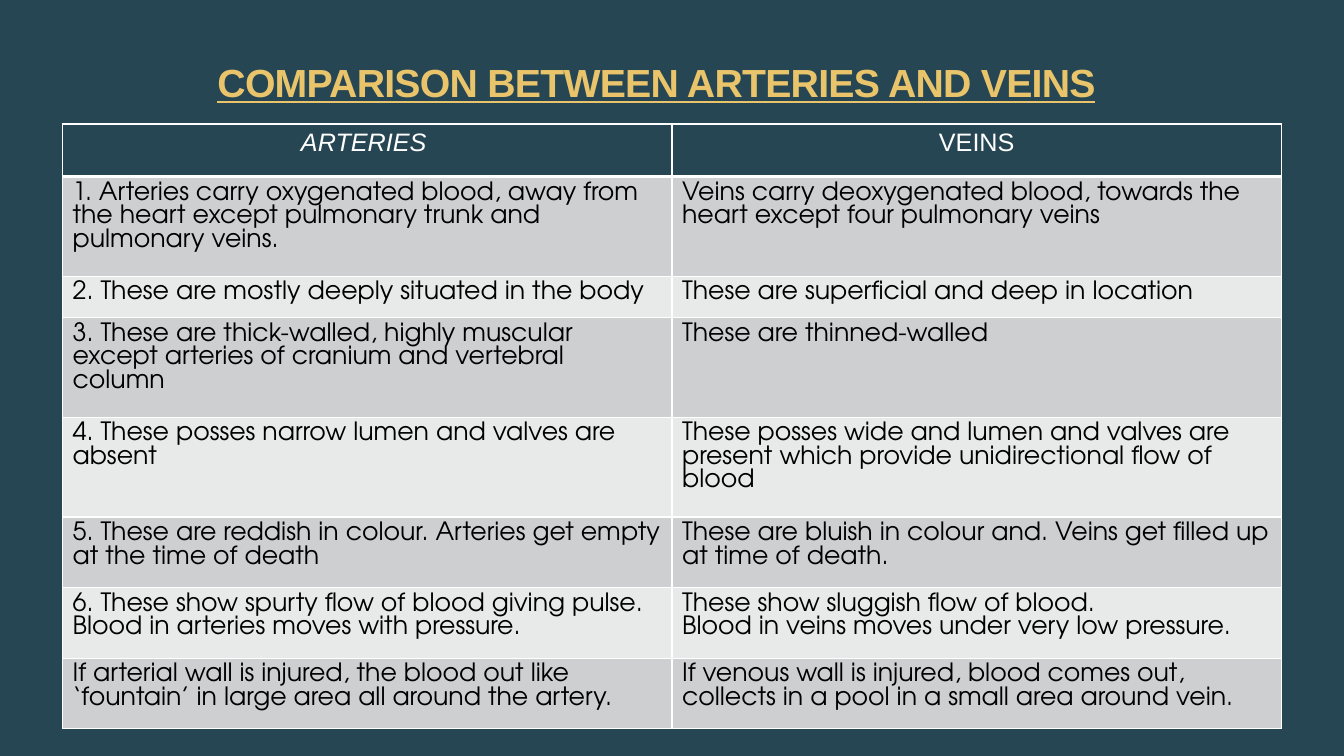
from lxml import etree
from pptx import Presentation
from pptx.dml.color import RGBColor
from pptx.enum.text import MSO_ANCHOR, MSO_AUTO_SIZE, PP_ALIGN
from pptx.oxml.ns import qn
from pptx.util import Inches, Pt

CENTER, LEFT = PP_ALIGN.CENTER, PP_ALIGN.LEFT
BOTTOM = MSO_ANCHOR.BOTTOM
NO_AUTOFIT = MSO_AUTO_SIZE.NONE

TEAL, GOLD, WHITE, BLACK = "264653", "E9C46A", "FFFFFF", "000000"
BANDS = ("CDCFD1", "E8E9E9")
HEADINGS = ("ARTERIES ", "VEINS")
COMPARISONS = [
    ("1. Arteries carry oxygenated blood, away from the heart except pulmonary trunk and pulmonary veins.",
     "Veins carry deoxygenated blood, towards the heart except four pulmonary veins"),
    ("2. These are mostly deeply situated in the body",
     "These are superficial and deep in location"),
    ("3. These are thick-walled, highly muscular except arteries of cranium and vertebral column",
     "These are thinned-walled"),
    ("4. These posses narrow lumen and valves are absent",
     "These posses wide and lumen and valves are present which provide unidirectional flow of blood"),
    ("5. These are reddish in colour. Arteries get empty at the time of death",
     "These are bluish in colour and. Veins get filled up at time of death."),
    ("6. These show spurty flow of blood giving pulse.\nBlood in arteries moves with pressure.",
     "These show sluggish flow of blood.\nBlood in veins moves under very low pressure."),
    ("If arterial wall is injured, the blood out like ‘fountain’ in large area all around the artery.",
     "If venous wall is injured, blood comes out, collects in a pool in a small area around vein."),
]
ROW_HEIGHTS = (0.52, 0.99, 0.41, 0.99, 0.99, 0.7, 0.7, 0.7)


def rgb(hex_string):
    """Turn a hex string into a colour."""
    return RGBColor.from_string(hex_string)


def style_paragraph(paragraph, size, face, color, align):
    """Set the font and alignment of a paragraph."""
    paragraph.alignment = align
    paragraph.font.size = Pt(size)
    paragraph.font.name = face
    paragraph.font.color.rgb = rgb(color)


def add_title(slide, left, top, width, height):
    """Place the underlined heading in its box."""
    title = slide.shapes.title
    title.left, title.top, title.width, title.height = map(Inches, (left, top, width, height))
    frame = title.text_frame
    frame.text = "COMPARISON BETWEEN ARTERIES AND VEINS"
    frame.margin_left = frame.margin_top = frame.margin_right = frame.margin_bottom = 0
    frame.vertical_anchor = BOTTOM
    frame.auto_size = NO_AUTOFIT
    heading = frame.paragraphs[0]
    style_paragraph(heading, 28, "Arial", GOLD, CENTER)
    heading.font.bold = heading.font.underline = True
    heading.runs[0].font._element.set("spc", "-50")


def add_borders(cell, widths):
    """Draw white borders of the given point widths, keyed by side."""
    properties = cell._tc.get_or_add_tcPr()
    for side, width in widths.items():
        line = etree.SubElement(properties, qn(f"a:ln{side}"), w=str(Pt(width)))
        fill = etree.SubElement(line, qn("a:solidFill"))
        etree.SubElement(fill, qn("a:srgbClr"), val=WHITE)


def fill_cell(cell, text, is_header, band):
    """Write and colour one table cell."""
    cell.text = text
    for paragraph in cell.text_frame.paragraphs:
        if is_header:
            style_paragraph(paragraph, 18, "Arial", WHITE, CENTER)
        else:
            style_paragraph(paragraph, 18, "TeX Gyre Adventor", BLACK, LEFT)


    add_borders(cell, {"L": 1, "R": 1, "T": 1, "B": 3 if is_header else 1})
    cell.fill.solid()
    cell.fill.fore_color.rgb = rgb(band)


def add_comparison(slide, left, top, width):
    """Build the two-column table from its top left corner."""
    rows = [HEADINGS] + COMPARISONS
    table = slide.shapes.add_table(
        len(rows), len(HEADINGS), Inches(left), Inches(top),
        Inches(width), Inches(sum(ROW_HEIGHTS))).table
    table.first_row = table.horz_banding = False
    for row_index, (texts, height) in enumerate(zip(rows, ROW_HEIGHTS)):
        table.rows[row_index].height = Inches(height)
        is_header = row_index == 0
        band = TEAL if is_header else BANDS[(row_index - 1) % 2]
        for column, text in enumerate(texts):
            fill_cell(table.cell(row_index, column), text, is_header, band)
    table.cell(0, 0).text_frame.paragraphs[0].font.italic = True


def main():
    """Build and save the slide."""
    deck = Presentation()
    deck.slide_width, deck.slide_height = Inches(13.33), Inches(7.5)
    slide = deck.slides.add_slide(deck.slide_layouts[5])
    slide.background.fill.solid()
    slide.background.fill.fore_color.rgb = rgb(TEAL)
    add_title(slide, 1.51, 0.58, 10, 0.47)
    add_comparison(slide, 0.62, 1.23, 12.09)
    deck.save("out.pptx")


if __name__ == "__main__":
    main()
